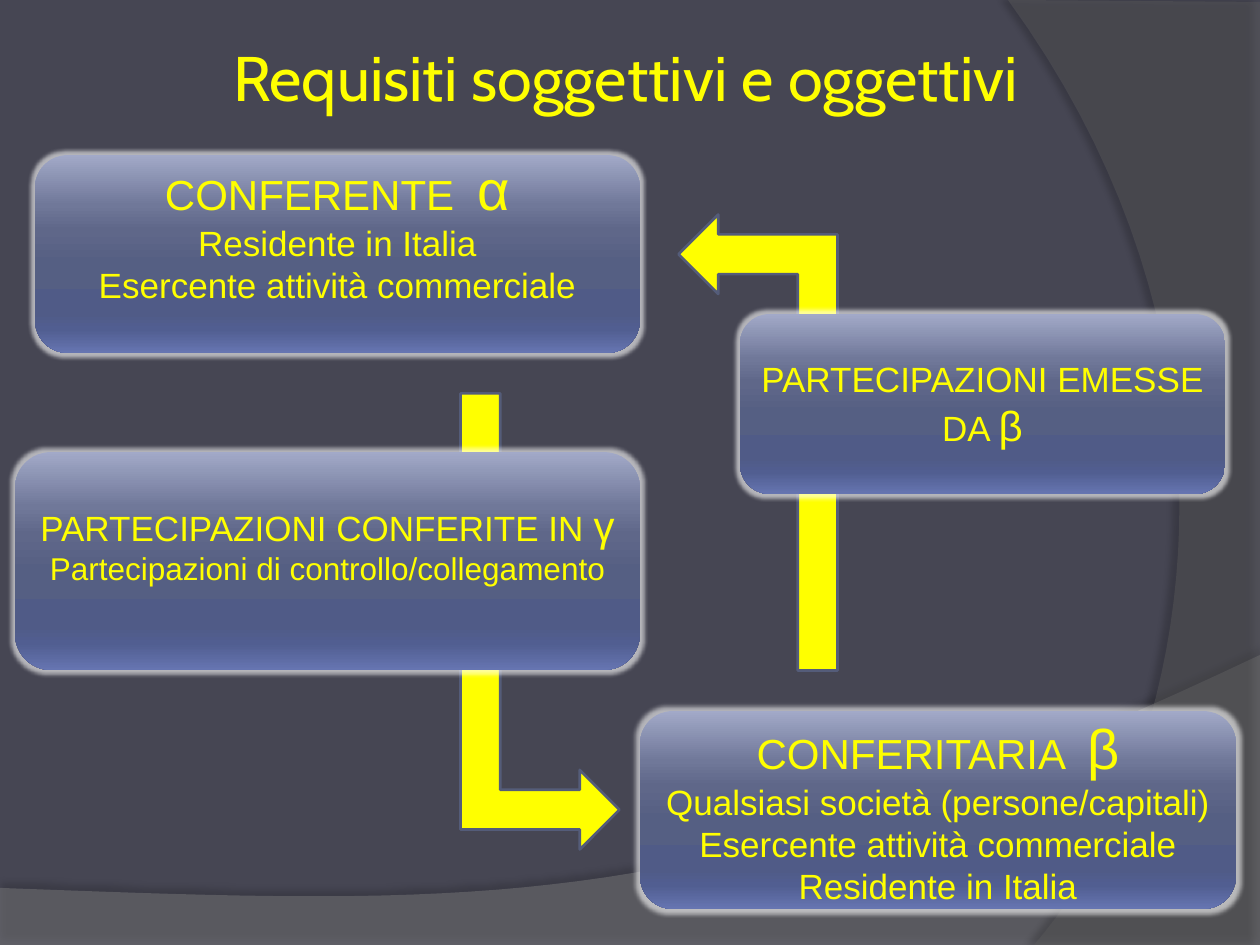
"""Build the slide on subjective and objective requirements of a share contribution."""
from dataclasses import dataclass

import pptx
import pptx.dml.color
import pptx.enum.shapes
import pptx.enum.text
import pptx.oxml
import pptx.oxml.ns
import pptx.util
from lxml import etree

EMU_PER_PX = 914400 / 126
CURVE_STEPS = 40


@dataclass(frozen=True)
class Theme:
    background: str = "464653"
    text: str = "FFFF00"
    arrow: str = "FFFF00"
    arrow_line: str = "545C79"
    wave: str = "7F7F7F"
    side: str = "5E5E5E"
    shadow: str = "000000"
    glow: str = "FFFFFF"
    gradient: tuple = ((0, "A2A9C8"), (25, "707899"), (38, "5F6789"), (55, "555F83"),
                       (80, "505B87"), (88, "515E91"), (100, "6675B1"))
    title_font: str = "Cabin"
    body_font: str = "Arial"
    title: int = 36
    symbol: int = 32
    head: int = 24
    body: int = 20
    small: int = 18


THEME = Theme()


def px(n):
    return pptx.util.Emu(round(n * EMU_PER_PX))


def rgb(value):
    return pptx.dml.color.RGBColor.from_string(value)


def add_node(parent, tag, **attrs):
    node = etree.SubElement(parent, pptx.oxml.ns.qn(tag))
    for name, value in attrs.items():
        node.set(name, str(value))
    return node


def add_colour(parent, colour, opacity):
    node = add_node(parent, "a:srgbClr", val=colour)
    add_node(node, "a:alpha", val=opacity * 1000)


def add_effect(s, tag, colour, opacity, **attrs):
    s.shadow.inherit = False
    effects = s._element.spPr.find(pptx.oxml.ns.qn("a:effectLst"))
    add_colour(add_node(effects, tag, **attrs), colour, opacity)


def bezier(p0, p1, p2, p3):
    points = []
    for i in range(1, CURVE_STEPS + 1):
        t = i / CURVE_STEPS
        u = 1 - t
        points.append(tuple(u**3 * a + 3 * u * u * t * b + 3 * u * t * t * c + t**3 * d
                            for a, b, c, d in zip(p0, p1, p2, p3)))
    return points


def add_backdrop(slide, corners, curve, colour, opacity, shadow_opacity, direction):
    points = [(px(x), px(y)) for x, y in corners + bezier(corners[-1], *curve)]
    builder = slide.shapes.build_freeform(*points[0], scale=1.0)
    builder.add_line_segments(points[1:], close=True)
    s = builder.convert_to_shape()
    s.fill.solid()
    s.fill.fore_color.rgb = rgb(colour)
    fill_colour = s._element.spPr.find(".//" + pptx.oxml.ns.qn("a:srgbClr"))
    add_node(fill_colour, "a:alpha", val=opacity * 1000)
    s.line.fill.background()
    add_effect(s, "a:outerShdw", THEME.shadow, shadow_opacity, blurRad=pptx.util.Pt(4),
               dist=pptx.util.Pt(4), dir=direction * 60000, algn="ctr", rotWithShape=0)


def write_text(tf, lines, font):
    tf.word_wrap = True
    tf.vertical_anchor = pptx.enum.text.MSO_ANCHOR.MIDDLE
    for i, line in enumerate(lines):
        p = tf.paragraphs[0] if i == 0 else tf.add_paragraph()
        p.alignment = pptx.enum.text.PP_ALIGN.CENTER
        for text, size in line:
            r = p.add_run()
            r.text = text
            r.font.size = pptx.util.Pt(size)
            r.font.name = font
            r.font.color.rgb = rgb(THEME.text)


def add_title(slide, text, box):
    tf = slide.shapes.add_textbox(*map(px, box)).text_frame
    tf.margin_left = tf.margin_right = tf.margin_top = tf.margin_bottom = px(6)
    write_text(tf, [[(text, THEME.title)]], THEME.title_font)


def add_box(slide, box, lines, bottom=6):
    kind = pptx.enum.shapes.MSO_SHAPE.ROUNDED_RECTANGLE
    s = slide.shapes.add_shape(kind, *map(px, box))
    s.fill.gradient()
    s.fill.gradient_angle = 270
    stops = s._element.spPr.find(".//" + pptx.oxml.ns.qn("a:gsLst"))
    for old in list(stops):
        stops.remove(old)
    for position, colour in THEME.gradient:
        add_colour(add_node(stops, "a:gs", pos=position * 1000), colour, 100)
    s.line.fill.background()
    add_effect(s, "a:glow", THEME.glow, 60, rad=pptx.util.Pt(5))
    s.text_frame.margin_bottom = px(bottom)
    write_text(s.text_frame, lines, THEME.body_font)


def add_bent_arrow(slide, box, rotation):
    s = slide.shapes.add_shape(pptx.enum.shapes.MSO_SHAPE.BENT_UP_ARROW, *map(px, box))
    s.rotation = rotation
    s.fill.solid()
    s.fill.fore_color.rgb = rgb(THEME.arrow)
    s.line.color.rgb = rgb(THEME.arrow_line)
    s.line.width = pptx.util.Pt(1.5)
    s.shadow.inherit = False


def main():
    prs = pptx.Presentation()
    prs.slide_width, prs.slide_height = px(1260), px(945)
    slide = prs.slides.add_slide(prs.slide_layouts[6])
    slide.background.fill.solid()
    slide.background.fill.fore_color.rgb = rgb(THEME.background)

    add_backdrop(slide, [(0, 888), (0, 945), (1260, 945), (1260, 655)],
                 [(704, 919), (493, 906), (0, 888)], THEME.wave, 45, 35, 270)
    add_backdrop(slide, [(1260, 2), (1260, 945), (1034, 945)],
                 [(1178, 780), (1283, 378), (1008, 0)], THEME.side, 40, 45, 180)

    add_box(slide, (35, 155, 605, 198), [
        [("CONFERENTE  ", THEME.head), ("α", THEME.symbol)],
        [("Residente in Italia", THEME.body)],
        [("Esercente attività commerciale", THEME.body)],
    ], bottom=54)
    add_box(slide, (640, 711, 596, 198), [
        [("CONFERITARIA  ", THEME.head), ("β", THEME.symbol)],
        [("Qualsiasi società (persone/capitali)", THEME.body)],
        [("Esercente attività commerciale", THEME.body)],
        [("Residente in Italia", THEME.body)],
    ])
    add_title(slide, "Requisiti soggettivi e oggettivi", (25, 37, 1201, 79))
    add_bent_arrow(slide, (312, 542, 456, 159), 90)
    add_box(slide, (15, 452, 625, 218), [
        [("PARTECIPAZIONI CONFERITE IN ", THEME.body), ("γ", THEME.head)],
        [("Partecipazioni di controllo/collegamento", THEME.small)],
    ], bottom=42)
    add_bent_arrow(slide, (530, 363, 456, 159), 270)
    add_box(slide, (740, 314, 485, 180), [
        [("PARTECIPAZIONI EMESSE DA ", THEME.body), ("β", THEME.head)],
    ])
    prs.save("out.pptx")


if __name__ == "__main__":
    main()
